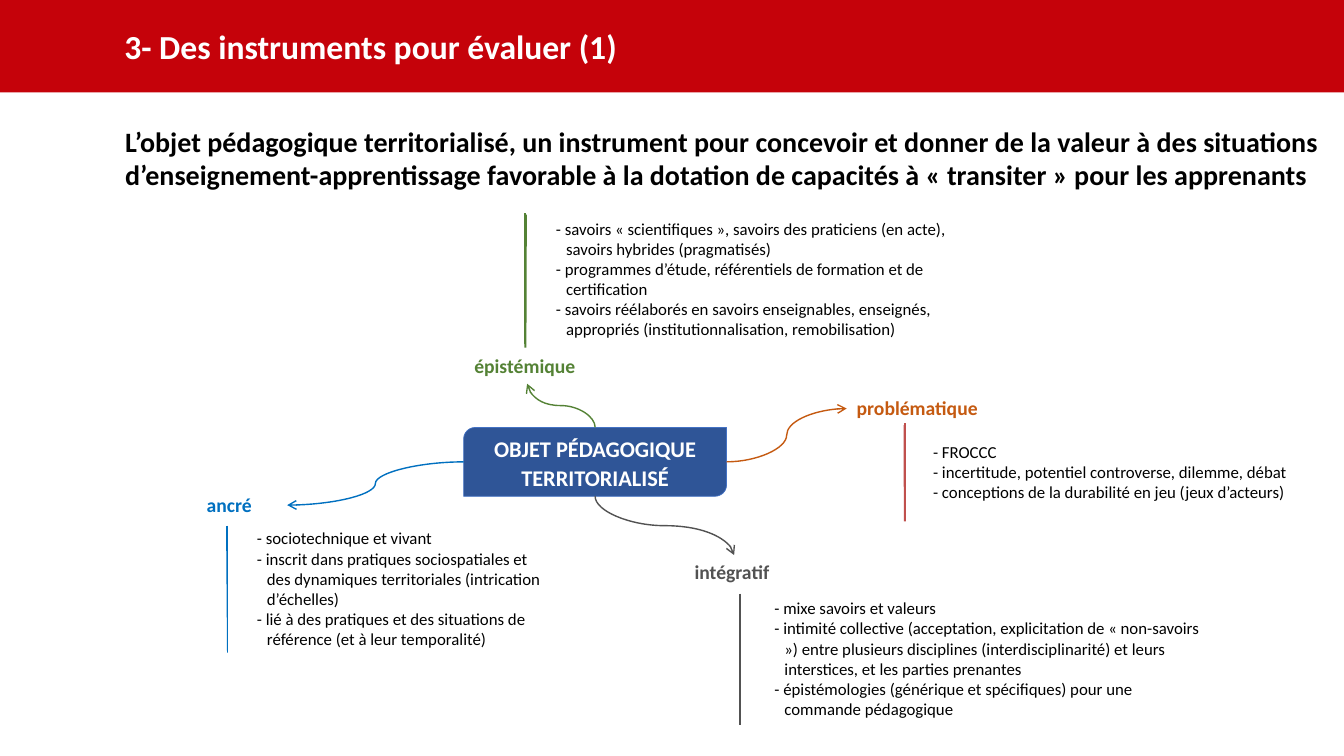
from lxml.etree import SubElement
from pptx import Presentation
from pptx.dml.color import RGBColor
from pptx.enum.shapes import MSO_CONNECTOR, MSO_SHAPE
from pptx.enum.text import MSO_ANCHOR, MSO_AUTO_SIZE, PP_ALIGN
from pptx.oxml.ns import qn
from pptx.util import Inches, Pt

COLUMNS = 16

deck = Presentation()
deck.slide_width, deck.slide_height = Inches(13.33), Inches(7.5)
CELL = deck.slide_width / COLUMNS
slide = deck.slides.add_slide(deck.slide_layouts[5])
shapes = slide.shapes


def cells(*counts):
    return [round(count * CELL) for count in counts]


def write(paragraph, words, size, color, bold=True, align=PP_ALIGN.LEFT):
    paragraph.alignment = align
    run = paragraph.add_run()
    run.text = words
    run.font.name, run.font.size, run.font.bold = "Calibri", Pt(size), bold
    run.font.color.rgb = RGBColor.from_string(color)


banner = shapes.title
banner.left, banner.top, banner.width, banner.height = cells(0, 0, COLUMNS, 1.1)
banner.fill.solid()
banner.fill.fore_color.rgb = RGBColor.from_string("C5020A")
banner_text = banner.text_frame
banner_text.auto_size = MSO_AUTO_SIZE.NONE
banner_text.vertical_anchor = MSO_ANCHOR.MIDDLE
banner_text.margin_left = cells(1.48)[0]
banner_text.paragraphs[0].space_after = Pt(6)
write(banner_text.paragraphs[0], "3- Des instruments pour évaluer (1)", 24, "FFFFFF")

thesis = shapes.add_textbox(*cells(1.37, 1.42, 14.46, 0.92)).text_frame
thesis.word_wrap = True
thesis.paragraphs[0].space_after = Pt(6)
write(thesis.paragraphs[0],
      "L’objet pédagogique territorialisé, un instrument pour concevoir et donner de la valeur "
      "à des situations d’enseignement-apprentissage favorable à la dotation de capacités "
      "à « transiter » pour les apprenants", 20, "000000")

HUB = (5.52, 5.09, 3.13, 0.82)
hub = shapes.add_shape(MSO_SHAPE.ROUND_2_DIAG_RECTANGLE, *cells(*HUB))
hub.shadow.inherit = False
hub.fill.solid()
hub.fill.fore_color.rgb = RGBColor.from_string("2F5597")
hub.line.color.rgb = RGBColor.from_string("4472C4")
hub.line.width = Pt(0.5)
hub.text_frame.vertical_anchor = MSO_ANCHOR.MIDDLE
hub.text_frame.paragraphs[0].line_spacing = 1.1
write(hub.text_frame.paragraphs[0], "OBJET PÉDAGOGIQUE TERRITORIALISÉ", 16, "FFFFFF",
      align=PP_ALIGN.CENTER)

LABEL_HEIGHT = 0.41
dimensions = [
    ("épistémique ", "548235", "548235", 1.5, PP_ALIGN.CENTER, (0, -1), (5.28, 4.16, 1.99),
     (6.5, 2.54, 5.02, 1.56), (1.026, -0.049, 0.011, -0.048),
     ["- savoirs « scientifiques », savoirs des praticiens (en acte), savoirs hybrides (pragmatisés)",
      "- programmes d’étude, référentiels de formation et de certification",
      "- savoirs réélaborés en savoirs enseignables, enseignés, appropriés "
      "(institutionnalisation, remobilisation)"]),
    ("problématique", "C55A11", "C0504D", 1.5, PP_ALIGN.LEFT, (1, 0), (10.08, 4.66, 1.85),
     (10.99, 5.04, 4.52, 1.16), (1.007, -0.048, 0.02, -0.049),
     ["- FROCCC",
      "- incertitude, potentiel controverse, dilemme, débat",
      "- conceptions de la durabilité en jeu (jeux d’acteurs)"]),
    ("intégratif ", "525252", "525252", 1.5, PP_ALIGN.CENTER, (0, 1), (7.8, 6.61, 1.88),
     (9.1, 7.07, 5.42, 1.54), (1.014, -0.053, 0.006, -0.053),
     ["- mixe savoirs et valeurs",
      "- intimité collective (acceptation, explicitation de « non-savoirs ») entre plusieurs "
      "disciplines (interdisciplinarité) et leurs interstices, et les parties prenantes",
      "- épistémologies (générique et spécifiques) pour une commande pédagogique"]),
    ("ancré", "0070C0", "0070C0", 0.5, PP_ALIGN.CENTER, (-1, 0), (2.04, 5.81, 1.38),
     (2.94, 6.26, 3.76, 1.5), (1.011, -0.062, 0.003, -0.065),
     ["- sociotechnique et vivant",
      "- inscrit dans pratiques sociospatiales et des dynamiques territoriales "
      "(intrication d’échelles)",
      "- lié à des pratiques et des situations de référence (et à leur temporalité)"]),
]

for name, color, bar_color, bar_width, align, (right, down), place, area, bends, points in dimensions:
    left, top, width = place
    start_x = HUB[0] + HUB[2] * (1 + right) / 2
    start_y = HUB[1] + HUB[3] * (1 + down) / 2
    end_x = left + width * (1 - right) / 2
    end_y = top + LABEL_HEIGHT * (1 - down) / 2
    mid_x, mid_y = (start_x + end_x) / 2, (start_y + end_y) / 2
    half_x, half_y = (end_x - start_x) / 2, (end_y - start_y) / 2
    if down:
        half_x, half_y = -half_y, half_x
    arrow = shapes.add_connector(MSO_CONNECTOR.CURVE, *cells(
        mid_x - half_x, mid_y - half_y, mid_x + half_x, mid_y + half_y))
    arrow.rotation = 270 if down else 0
    arrow.line.color.rgb = RGBColor.from_string(color)
    arrow.line.width = Pt(1)
    SubElement(arrow.line._get_or_add_ln(), qn("a:tailEnd"), type="arrow")
    SubElement(arrow._element.spPr, qn("a:effectLst"))

    details = shapes.add_shape(MSO_SHAPE.LINE_CALLOUT_1_ACCENT_BAR, *cells(*area))
    details.shadow.inherit = False
    for index, bend in enumerate(bends):
        details.adjustments[index] = bend
    details.fill.solid()
    details.fill.fore_color.rgb = RGBColor.from_string("FFFFFF")
    details.line.color.rgb = RGBColor.from_string(bar_color)
    details.line.width = Pt(bar_width)
    body = details.text_frame
    body.vertical_anchor = MSO_ANCHOR.MIDDLE
    for index, point in enumerate(points):
        paragraph = body.add_paragraph() if index else body.paragraphs[0]
        hanging = paragraph._p.get_or_add_pPr()
        hanging.set("marL", str(Inches(0.1)))
        hanging.set("indent", str(-Inches(0.1)))
        write(paragraph, point, 12, "000000", bold=False)

    label = shapes.add_textbox(*cells(left, top, width, LABEL_HEIGHT)).text_frame
    label.word_wrap = True
    write(label.paragraphs[0], name, 14, color, align=align)

deck.save("out.pptx")
